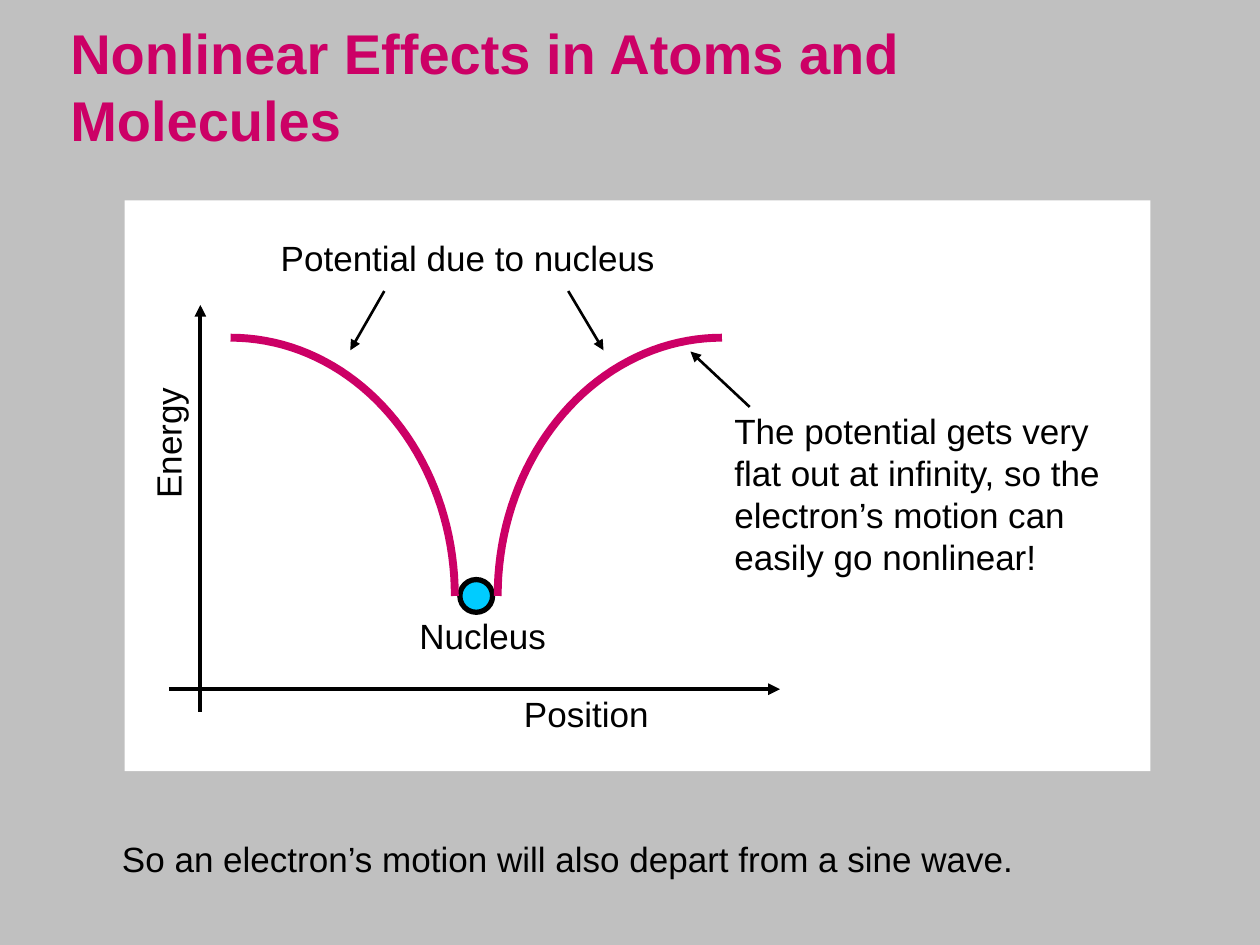
"""Build a slide on nonlinear effects in the potential around a nucleus."""
import math

import pptx
import pptx.dml.color
import pptx.enum.shapes
import pptx.enum.text
import pptx.oxml.ns
import pptx.util
from lxml import etree

Inches = pptx.util.Inches
Pt = pptx.util.Pt
BLACK = "000000"
PINK = "CC0066"


def paint(target, color):
    """Give a fill or a font colour a solid hex colour."""
    if hasattr(target, "solid"):
        target.solid()
        target = target.fore_color
    target.rgb = pptx.dml.color.RGBColor.from_string(color)


def stroke(shape, color, width):
    """Set the colour and the width of an outline."""
    paint(shape.line.fill, color)
    shape.line.width = Pt(width)


def add_text(slide, text, left, top, width, height, wrap=True, turn=0,
             size=20, color=BLACK, bold=False):
    """Add a text box in one style, centred on its height."""
    box = slide.shapes.add_textbox(
        Inches(left), Inches(top), Inches(width), Inches(height))
    box.rotation = turn
    frame = box.text_frame
    frame.text = text
    frame.word_wrap = wrap
    frame.vertical_anchor = pptx.enum.text.MSO_ANCHOR.MIDDLE
    for run in frame.paragraphs[0].runs:
        run.font.name = "Arial"
        run.font.size = Pt(size)
        run.font.bold = bold
        paint(run.font.color, color)


def add_solid(slide, kind, left, top, width, height, color):
    """Add a filled preset shape with no outline."""
    shape = slide.shapes.add_shape(
        kind, Inches(left), Inches(top), Inches(width), Inches(height))
    shape.shadow.inherit = False
    paint(shape.fill, color)
    shape.line.fill.background()
    return shape


def add_arrow(slide, start, end, width):
    """Add a straight line with an arrowhead at its end."""
    line = slide.shapes.add_connector(
        pptx.enum.shapes.MSO_CONNECTOR.STRAIGHT,
        *(Inches(value) for value in (*start, *end)))
    stroke(line, BLACK, width)
    qn = pptx.oxml.ns.qn
    etree.SubElement(line.line._get_or_add_ln(), qn("a:tailEnd"), type="triangle")
    etree.SubElement(line._element.spPr, qn("a:effectLst"))


def add_curve(slide, far, near, top, base, steps=40):
    """Draw a quarter ellipse from its flat far end down to the nucleus."""
    points = []
    for step in range(steps + 1):
        angle = math.pi / 2 * step / steps
        x = far + (near - far) * math.sin(angle)
        y = base - (base - top) * math.cos(angle)
        points.append((Inches(x), Inches(y)))
    path = slide.shapes.build_freeform(*points[0])
    path.add_line_segments(points[1:], close=False)
    curve = path.convert_to_shape()
    curve.shadow.inherit = False
    curve.fill.background()
    stroke(curve, PINK, 4.5)


def main():
    """Build and save the slide."""
    deck = pptx.Presentation()
    deck.slide_width, deck.slide_height = Inches(10), Inches(7.5)
    slide = deck.slides.add_slide(deck.slide_layouts[6])
    paint(slide.background.fill, "C0C0C0")
    kinds = pptx.enum.shapes.MSO_SHAPE

    add_text(slide, "Nonlinear Effects in Atoms and Molecules",
             0.46, 0.29, 9.04, 0.78, size=32, color=PINK, bold=True)
    add_solid(slide, kinds.RECTANGLE, 0.99, 1.59, 8.14, 4.53, "FFFFFF")

    core = add_solid(slide, kinds.OVAL, 3.65, 4.6, 0.26, 0.26, "00CCFF")
    stroke(core, BLACK, 3)
    for far, near in ((1.83, 3.61), (5.73, 3.95)):
        add_curve(slide, far, near, 2.68, 4.73)

    for start, end in (((1.59, 5.65), (1.59, 2.42)), ((1.34, 5.47), (6.19, 5.47))):
        add_arrow(slide, start, end, 2.25)
    for start, end in (((3.05, 2.31), (2.78, 2.78)),
                       ((4.51, 2.31), (4.79, 2.78)),
                       ((5.95, 3.23), (5.48, 2.79))):
        add_arrow(slide, start, end, 1.5)

    add_text(slide, "Potential due to nucleus", 2.13, 1.83, 3.53, 0.43)
    add_text(slide, "Nucleus", 3.23, 4.83, 1.34, 0.43)
    add_text(slide, "Energy", 0.79, 3.3, 1.08, 0.43, wrap=False, turn=270)
    add_text(slide, "Position", 4.06, 5.45, 1.19, 0.43, wrap=False)
    add_text(slide, "The potential gets very flat out at infinity, so the "
             "electron’s motion can easily go nonlinear!", 5.73, 3.2, 3.19, 1.43)
    add_text(slide, "So an electron’s motion will also depart from a sine wave.",
             0.87, 6.6, 8.36, 0.43)
    deck.save("out.pptx")


if __name__ == "__main__":
    main()
